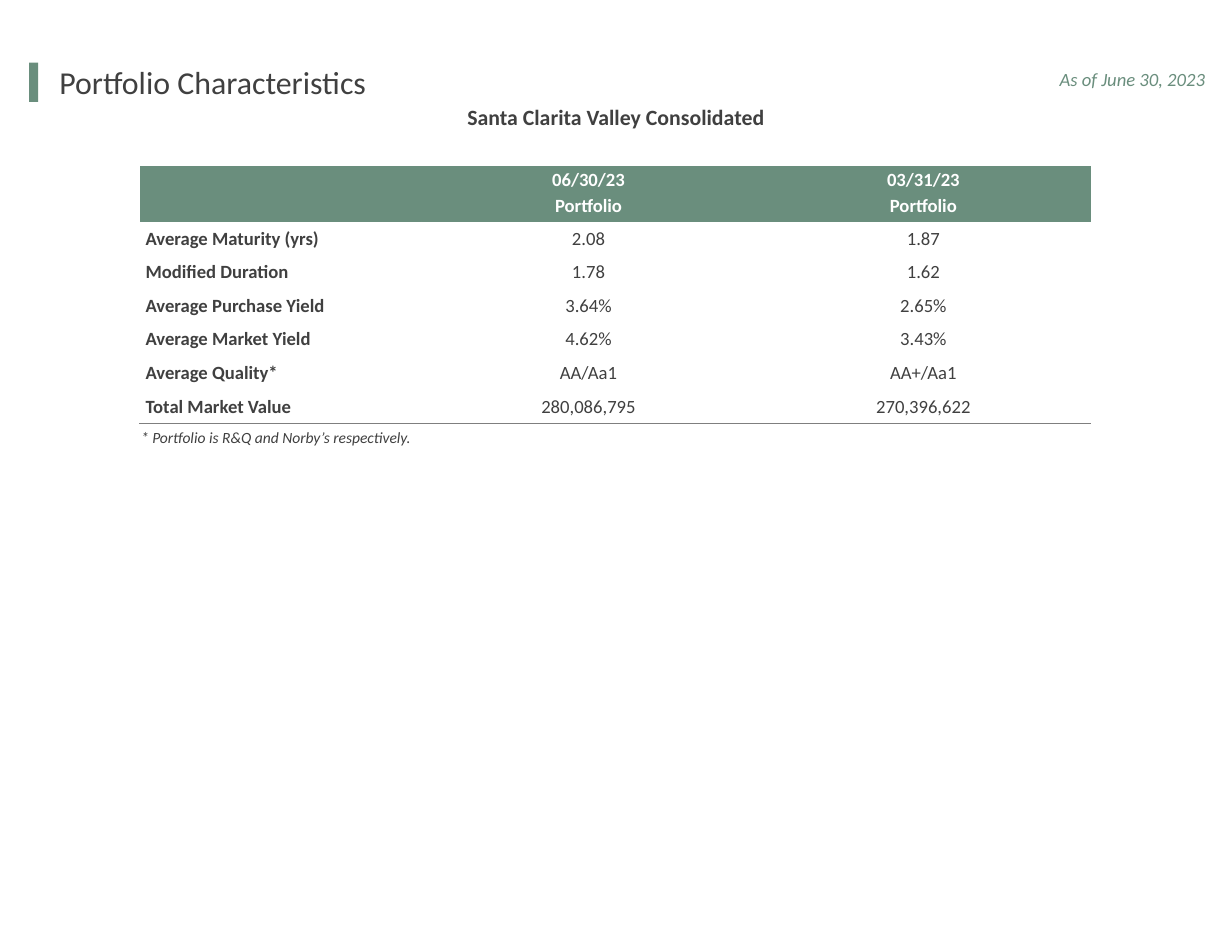
from pptx import Presentation
from pptx.dml.color import RGBColor
from pptx.enum.shapes import MSO_SHAPE
from pptx.enum.text import MSO_ANCHOR, PP_ALIGN
from pptx.oxml.ns import qn
from pptx.util import Inches, Pt
from lxml.etree import SubElement

GREEN, DARK, GREY, WHITE = "6A8E7D", "404040", "7F7F7F", "FFFFFF"


def write(frame, text, size, color, align=PP_ALIGN.LEFT, bold=False, italic=False,
          anchor=MSO_ANCHOR.TOP, insets=(0, 0, 0, 0)):
    frame.word_wrap = True
    frame.vertical_anchor = anchor
    (frame.margin_left, frame.margin_top,
     frame.margin_right, frame.margin_bottom) = map(Inches, insets)
    paragraph = frame.paragraphs[0]
    paragraph.text = text
    paragraph.alignment = align
    font = paragraph.font
    font.name, font.size, font.bold, font.italic = "Calibri", Pt(size), bold, italic
    font.color.rgb = RGBColor.from_string(color)


def set_borders(cell, colors):
    properties = cell._tc.get_or_add_tcPr()
    for side, color in zip("LRTB", colors):
        border = SubElement(properties, qn(f"a:ln{side}"), w=str(Pt(1)))
        if color:
            fill = SubElement(border, qn("a:solidFill"))
            SubElement(fill, qn("a:srgbClr"), val=color)
        else:
            SubElement(border, qn("a:noFill"))


prs = Presentation()
prs.slide_width, prs.slide_height = Inches(11), Inches(8.5)
slide = prs.slides.add_slide(prs.slide_layouts[5])

# Title with accent bar
accent = slide.shapes.add_shape(MSO_SHAPE.RECTANGLE, Inches(0.26), Inches(0.56),
                                Inches(0.08), Inches(0.35))
accent.shadow.inherit = False
accent.fill.solid()
accent.fill.fore_color.rgb = RGBColor.from_string(GREEN)
accent.line.fill.background()

title = slide.shapes.title
title.left, title.top = Inches(0.53), Inches(0.56)
title.width, title.height = Inches(4.95), Inches(0.37)
write(title.text_frame, "Portfolio Characteristics", 20.5, DARK)

# Portfolio name and reporting date
portfolio_name = slide.shapes.add_textbox(0, Inches(0.93), Inches(11), Inches(0.24))
write(portfolio_name.text_frame, "Santa Clarita Valley Consolidated", 14, DARK,
      PP_ALIGN.CENTER, bold=True)

as_of = slide.shapes.add_textbox(Inches(5.93), Inches(0.61), Inches(4.93), Inches(0.2))
write(as_of.text_frame, "As of June 30, 2023", 12, GREEN, PP_ALIGN.RIGHT, italic=True,
      anchor=MSO_ANCHOR.MIDDLE, insets=(0.1, 0.05, 0.1, 0.05))

# Characteristics table
headers = [("", "06/30/23", "03/31/23"), ("", "Portfolio", "Portfolio")]
characteristics = [
    ("Average Maturity (yrs)", "2.08", "1.87"),
    ("Modified Duration", "1.78", "1.62"),
    ("Average Purchase Yield", "3.64%", "2.65%"),
    ("Average Market Yield", "4.62%", "3.43%"),
    ("Average Quality*", "AA/Aa1", "AA+/Aa1"),
    ("Total Market Value", "280,086,795", "270,396,622"),
]
footnote_row = len(headers) + len(characteristics)
table = slide.shapes.add_table(footnote_row + 1, 3, Inches(1.25), Inches(1.48),
                               Inches(8.5), Inches(2.57)).table
table.first_row = table.horz_banding = False
for column, width in zip(table.columns, (2.51, 2.99, 2.99)):
    column.width = Inches(width)
for row, height in zip(table.rows, [0.25] * 2 + [0.3] * 6 + [0.19]):
    row.height = Inches(height)

# Header rows
for r, labels in enumerate(headers):
    for c, label in enumerate(labels):
        cell = table.cell(r, c)
        write(cell.text_frame, label, 12, WHITE, PP_ALIGN.CENTER, bold=True)
        cell.vertical_anchor = MSO_ANCHOR.TOP if r else MSO_ANCHOR.MIDDLE
        cell.margin_left = cell.margin_right = Inches(0.1 if r else 0)
        cell.margin_top = cell.margin_bottom = Inches(0.01 if r else 0)
        set_borders(cell, [None] * 4)
        cell.fill.solid()
        cell.fill.fore_color.rgb = RGBColor.from_string(GREEN)

# Value rows
for r, values in enumerate(characteristics, len(headers)):
    top = None if r == len(headers) else WHITE
    bottom = GREY if r == footnote_row - 1 else WHITE
    for c, value in enumerate(values):
        cell = table.cell(r, c)
        write(cell.text_frame, value, 12, DARK, PP_ALIGN.CENTER if c else PP_ALIGN.LEFT,
              bold=c == 0)
        cell.vertical_anchor = MSO_ANCHOR.BOTTOM
        cell.margin_left = Inches(0.1 if c else 0.05)
        cell.margin_right = Inches(0.1 if c else 0.01)
        cell.margin_top = cell.margin_bottom = Inches(0.05)
        set_borders(cell, (WHITE, WHITE, top, bottom))
        cell.fill.background()

# Footnote across the table
for c in range(3):
    set_borders(table.cell(footnote_row, c), (WHITE, WHITE, GREY, WHITE))
footnote = table.cell(footnote_row, 0)
footnote.merge(table.cell(footnote_row, 2))
write(footnote.text_frame, "* Portfolio is R&Q and Norby’s respectively.", 10, DARK,
      italic=True)
footnote.margin_left = footnote.margin_right = Inches(0.01)
footnote.margin_top = footnote.margin_bottom = Inches(0.05)
footnote.fill.background()

prs.save("out.pptx")
